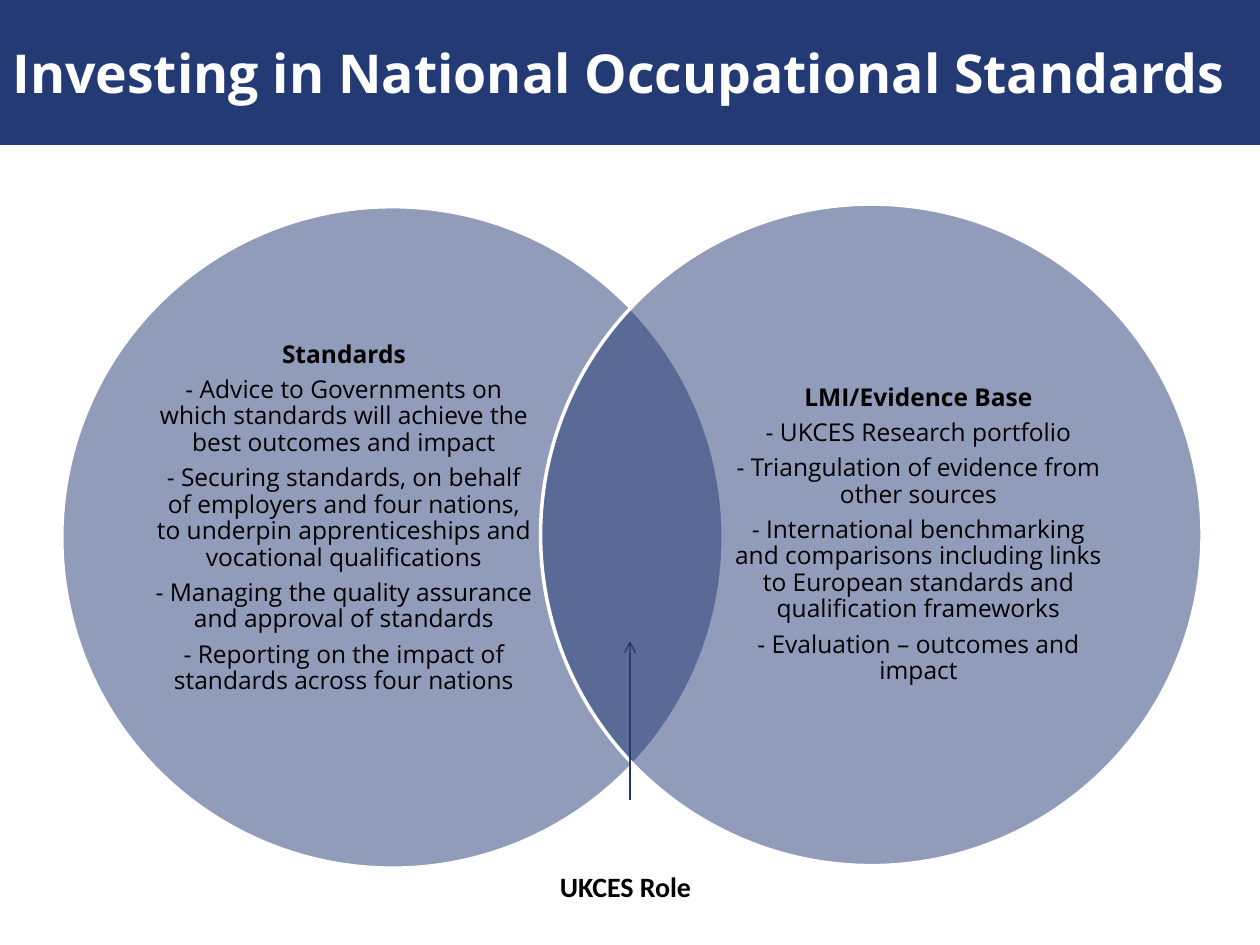
from lxml import etree
from pptx import Presentation
from pptx.dml.color import RGBColor
from pptx.enum import shapes, text
from pptx.oxml.ns import qn
from pptx.util import Inches, Pt

NAVY, ARROW, WHITE, BLACK = "233A75", "203874", "FFFFFF", "000000"
DIAMETER = 5.25

STANDARDS = [
    "Standards",
    "- Advice to Governments on which standards will achieve the best outcomes and impact",
    "- Securing standards, on behalf of employers and four nations, to underpin "
    "apprenticeships and vocational qualifications",
    "- Managing the quality assurance and approval of standards",
    "- Reporting on the impact of standards across four nations",
]
EVIDENCE = [
    "LMI/Evidence Base",
    "- UKCES Research portfolio",
    "- Triangulation of evidence from other sources",
    "- International benchmarking and comparisons including links to European "
    "standards and qualification frameworks",
    "- Evaluation – outcomes and impact",
]


def color(value):
    return RGBColor.from_string(value)


def box_of(left, top, width, height):
    return [Inches(length) for length in (left, top, width, height)]


def add_run(paragraph, words, size, font="Open Sans", fill=BLACK, bold=False):
    run = paragraph.add_run()
    run.text = words
    run.font.name = font
    run.font.size = Pt(size)
    run.font.bold = bold
    run.font.color.rgb = color(fill)


def add_title(slide, box, words):
    banner = slide.shapes.add_shape(shapes.MSO_SHAPE.RECTANGLE, *box_of(*box))
    banner.shadow.inherit = False
    banner.fill.solid()
    banner.fill.fore_color.rgb = color(NAVY)
    banner.line.fill.background()
    frame = banner.text_frame
    frame.word_wrap = True
    frame.vertical_anchor = text.MSO_ANCHOR.MIDDLE
    heading = frame.paragraphs[0]
    heading.alignment = text.PP_ALIGN.LEFT
    add_run(heading, words, 30.6, fill=WHITE, bold=True)


def add_circle(slide, left, top):
    circle = slide.shapes.add_shape(
        shapes.MSO_SHAPE.OVAL, *box_of(left, top, DIAMETER, DIAMETER))
    circle.shadow.inherit = False
    circle.fill.solid()
    circle.fill.fore_color.rgb = color(NAVY)
    tint = circle.fill._xPr.find(qn("a:solidFill"))[0]
    etree.SubElement(tint, qn("a:alpha"), val="50000")
    circle.line.color.rgb = color(WHITE)
    circle.line.width = Pt(2)


def add_points(slide, box, points):
    frame = slide.shapes.add_textbox(*box_of(*box)).text_frame
    frame.word_wrap = True
    frame.vertical_anchor = text.MSO_ANCHOR.MIDDLE
    frame.margin_left = frame.margin_right = 0
    frame.margin_top = frame.margin_bottom = 0
    for index, point in enumerate(points):
        paragraph = frame.add_paragraph() if index else frame.paragraphs[0]
        paragraph.alignment = text.PP_ALIGN.CENTER
        paragraph.line_spacing = 0.9
        paragraph.space_after = Pt(5)
        add_run(paragraph, point, 14, bold=index == 0)


def add_venn_side(slide, left, top, text_left, text_top, points):
    add_circle(slide, left, top)
    add_points(slide, (left + text_left, top + text_top, 3.02, 4.01), points)


def add_role(slide, box, words, arrow_x, arrow_start, arrow_end):
    arrow = slide.shapes.add_connector(
        shapes.MSO_CONNECTOR.STRAIGHT,
        Inches(arrow_x), Inches(arrow_start), Inches(arrow_x), Inches(arrow_end))
    arrow.line.color.rgb = color(ARROW)
    arrow.line.width = Pt(0.75)
    etree.SubElement(arrow.line._get_or_add_ln(), qn("a:tailEnd"), type="arrow")
    etree.SubElement(arrow._element.spPr, qn("a:effectLst"))

    frame = slide.shapes.add_textbox(*box_of(*box)).text_frame
    frame.word_wrap = True
    label = frame.paragraphs[0]
    label.alignment = text.PP_ALIGN.CENTER
    add_run(label, words, 16, font="Calibri", bold=True)


def main():
    deck = Presentation()
    deck.slide_width, deck.slide_height = Inches(10), Inches(7.5)
    slide = deck.slides.add_slide(deck.slide_layouts[6])
    add_title(slide, (0, 0, 10, 1.15), "Investing in National Occupational Standards")
    add_venn_side(slide, 0.49, 1.64, 0.73, 0.47, STANDARDS)
    add_venn_side(slide, 4.29, 1.62, 1.49, 0.62, EVIDENCE)
    add_role(slide, (4.2, 6.85, 1.53, 0.37), "UKCES Role", 5, 6.35, 5.09)
    deck.save("out.pptx")


if __name__ == "__main__":
    main()
